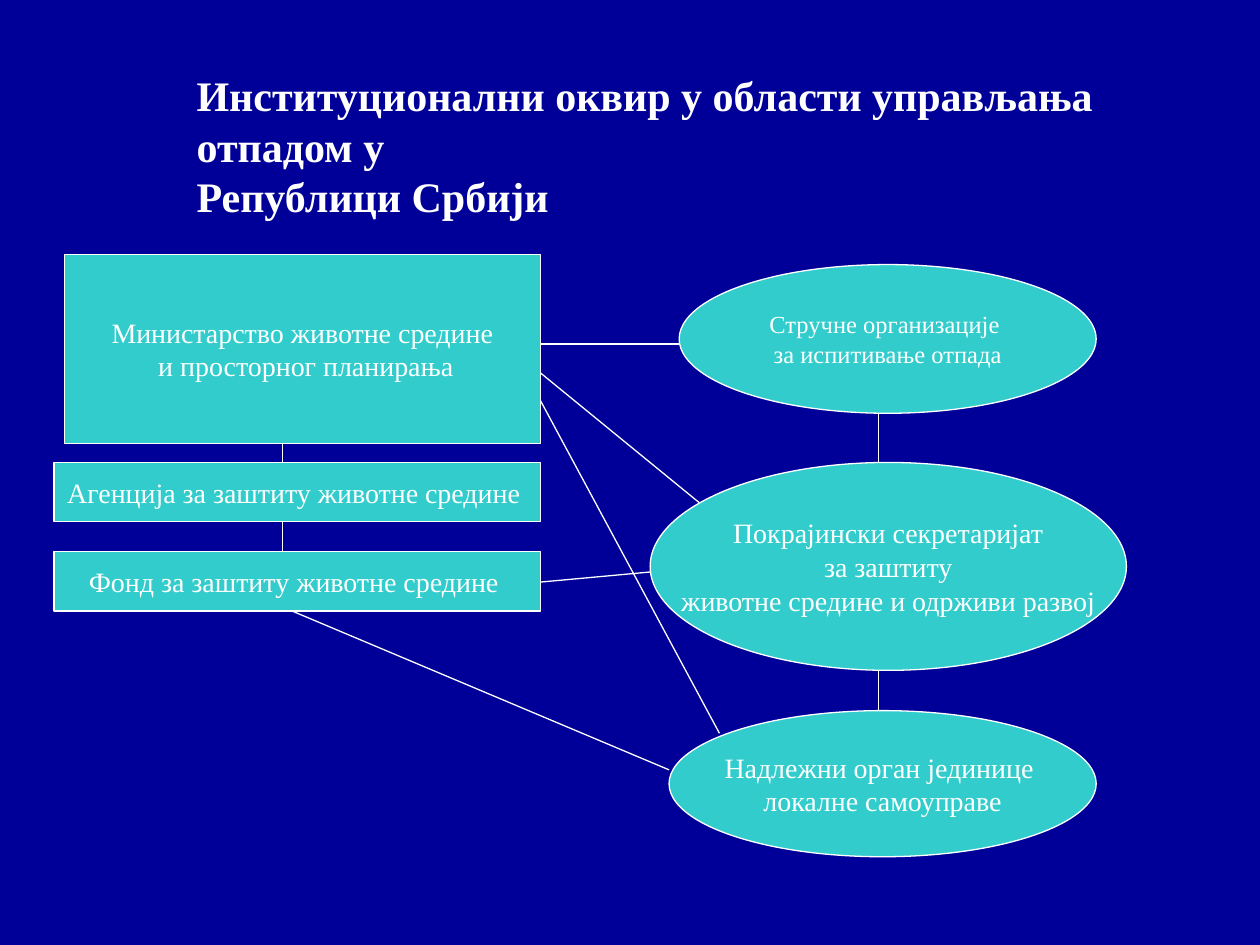
"""Builds a slide on the institutional framework for waste management in Serbia."""
from lxml.etree import SubElement
from pptx import Presentation
from pptx.dml.color import RGBColor
from pptx.enum.shapes import MSO_CONNECTOR, MSO_SHAPE
from pptx.enum.text import MSO_ANCHOR, PP_ALIGN
from pptx.oxml.ns import qn
from pptx.util import Inches, Pt

COLORS = {"background": "000099", "fill": "33CCCC", "white": "FFFFFF"}
FONT = "Times New Roman"
TITLE = "Институционални оквир у области управљања отпадом у \vРепублици Србији"
RECTANGLE, ELLIPSE = MSO_SHAPE.RECTANGLE, MSO_SHAPE.OVAL

BODIES = {
    "ministry": (RECTANGLE, (0.51, 2.02, 3.78, 1.5), 16,
                 ["Министарство животне средине", " и просторног планирања"]),
    "agency": (RECTANGLE, (0.43, 3.67, 3.86, 0.47), 16,
               ["Агенција за заштиту животне средине "]),
    "fund": (RECTANGLE, (0.43, 4.38, 3.86, 0.47), 16,
             ["Фонд за заштиту животне средине "]),
    "secretariat": (ELLIPSE, (5.16, 3.67, 3.78, 1.65), 16,
                    ["Покрајински секретаријат", " за заштиту ",
                     "животне средине и одрживи развој"]),
    "experts": (ELLIPSE, (5.39, 2.1, 3.31, 1.18), 14,
                ["Стручне организације ", "за испитивање отпада"]),
    "local": (ELLIPSE, (5.31, 5.64, 3.39, 1.16), 16,
              ["Надлежни орган јединице ", "локалне самоуправе"]),
}
VERTICAL_LINKS = [
    ("ministry", "agency", 2.24), ("agency", "fund", 2.24),
    ("experts", "secretariat", 6.97), ("secretariat", "local", 6.97),
]
SIDE_LINKS = [
    ((4.29, 2.73), (5.39, 2.73)), ((2.32, 4.85), (5.31, 6.11)),
    ((4.29, 2.96), (5.55, 3.99)), ((4.29, 3.18), (5.71, 5.82)),
    ((4.29, 4.62), (5.16, 4.54)),
]


def color(name):
    return RGBColor.from_string(COLORS[name])


def set_font(paragraph, size, bold=False):
    font = paragraph.font
    font.name, font.size, font.bold = FONT, Pt(size), bold
    font.color.rgb = color("white")


def add_title(slide):
    box = slide.shapes.add_textbox(*map(Inches, (1.14, 0.59, 7.97, 1.13)))
    frame = box.text_frame
    frame.word_wrap = True
    frame.vertical_anchor = MSO_ANCHOR.MIDDLE
    frame.margin_left = Inches(0.42)
    frame.text = TITLE
    set_font(frame.paragraphs[0], 24, True)


def add_body(slide, kind, bounds, size, lines):
    shape = slide.shapes.add_shape(kind, *map(Inches, bounds))
    shape.shadow.inherit = False
    shape.fill.solid()
    shape.fill.fore_color.rgb = color("fill")
    shape.line.color.rgb = color("white")
    shape.line.width = Pt(0.75)
    frame = shape.text_frame
    frame.word_wrap = False
    frame.vertical_anchor = MSO_ANCHOR.MIDDLE
    frame.text = "\n".join(lines)
    for paragraph in frame.paragraphs:
        paragraph.alignment = PP_ALIGN.CENTER
        set_font(paragraph, size)


def add_link(slide, start, end):
    link = slide.shapes.add_connector(
        MSO_CONNECTOR.STRAIGHT, *map(Inches, (*start, *end)))
    link.line.color.rgb = color("white")
    link.line.width = Pt(0.75)
    SubElement(link._element.spPr, qn("a:effectLst"))


def main():
    presentation = Presentation()
    presentation.slide_width, presentation.slide_height = Inches(10), Inches(7.5)
    slide = presentation.slides.add_slide(presentation.slide_layouts[6])
    slide.background.fill.solid()
    slide.background.fill.fore_color.rgb = color("background")
    for body in BODIES.values():
        add_body(slide, *body)
    add_title(slide)
    for upper, lower, x in VERTICAL_LINKS:
        _, top, _, height = BODIES[upper][1]
        add_link(slide, (x, top + height), (x, BODIES[lower][1][1]))
    for start, end in SIDE_LINKS:
        add_link(slide, start, end)
    presentation.save("out.pptx")


if __name__ == "__main__":
    main()
